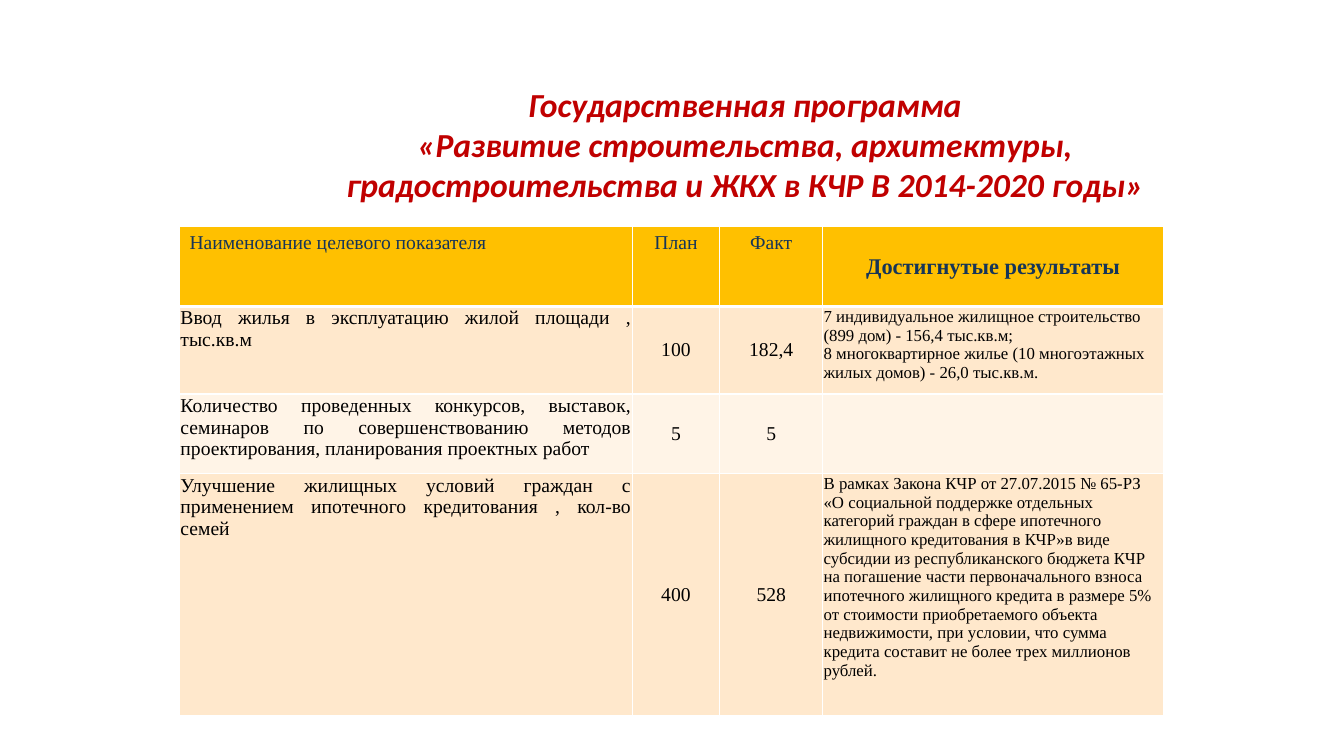
import pptx
import pptx.util
import pptx.dml.color
import pptx.enum.text
import pptx.oxml.ns
from dataclasses import dataclass
from lxml import etree

ALIGN = pptx.enum.text.PP_ALIGN
ANCHOR = pptx.enum.text.MSO_ANCHOR
Inches = pptx.util.Inches


@dataclass(frozen=True)
class Theme:
    title_font: str = "Calibri"
    table_font: str = "Times New Roman"
    title: str = "C00000"
    header_text: str = "163558"
    text: str = "000000"
    header_fill: str = "FFC000"
    bands: tuple = ("FFE8CC", "FFF4E7")
    border: str = "FFFFFF"
    title_size: int = 24
    heading_size: int = 16
    body_size: int = 14
    note_size: int = 12


THEME = Theme()
TIGHT = (0.01, 0.01, 0.01, 0)
ROOMY = (0.1, 0.05, 0.1, 0.05)

TITLE = ("Государственная программа\n«Развитие строительства, архитектуры, "
         "градостроительства и ЖКХ в КЧР В 2014-2020 годы»")
COLS = (4.49, 0.87, 1.02, 3.38)
ROWS = (0.79, 0.87, 0.79, 2.4)
HEADER = ("Наименование целевого показателя", "План", "Факт", "Достигнутые результаты")
INDICATORS = (
    ("Ввод жилья в эксплуатацию жилой площади , тыс.кв.м", "100", "182,4",
     "7 индивидуальное жилищное строительство (899 дом) - 156,4 тыс.кв.м;\n"
     "8 многоквартирное жилье (10 многоэтажных жилых домов) - 26,0 тыс.кв.м."),
    ("Количество проведенных конкурсов, выставок, семинаров по совершенствованию "
     "методов проектирования, планирования проектных работ", "5", "5", ""),
    ("Улучшение жилищных условий граждан с применением ипотечного кредитования , "
     "кол-во семей", "400", "528",
     "В рамках Закона КЧР от 27.07.2015 № 65-РЗ «О социальной поддержке отдельных "
     "категорий граждан в сфере ипотечного жилищного кредитования в КЧР»в виде субсидии "
     "из республиканского бюджета КЧР на погашение части первоначального взноса "
     "ипотечного жилищного кредита в размере 5% от стоимости приобретаемого объекта "
     "недвижимости, при условии, что сумма кредита составит не более трех миллионов рублей."),
)


@dataclass(frozen=True)
class CellStyle:
    size: int
    align: ALIGN
    anchor: ANCHOR = ANCHOR.TOP
    insets: tuple = ROOMY
    bold: bool = False


# One style per column, for the header and for the body rows
HEADER_STYLES = (
    CellStyle(THEME.body_size, ALIGN.LEFT),
    CellStyle(THEME.body_size, ALIGN.CENTER),
    CellStyle(THEME.body_size, ALIGN.CENTER),
    CellStyle(THEME.heading_size, ALIGN.CENTER, ANCHOR.MIDDLE, TIGHT, True),
)
BODY_STYLES = (
    CellStyle(THEME.body_size, ALIGN.JUSTIFY, insets=TIGHT),
    CellStyle(THEME.body_size, ALIGN.CENTER, ANCHOR.MIDDLE),
    CellStyle(THEME.body_size, ALIGN.CENTER, ANCHOR.MIDDLE),
    CellStyle(THEME.note_size, ALIGN.LEFT, insets=TIGHT),
)


def rgb(color):
    return pptx.dml.color.RGBColor.from_string(color)


def write(tf, text, font, size, color, align, bold=False, italic=False):
    tf.text = text
    for p in tf.paragraphs:
        p.alignment = align
        for f in [p.font] + [r.font for r in p.runs]:
            f.name, f.size, f.bold, f.italic = font, pptx.util.Pt(size), bold, italic
            f.color.rgb = rgb(color)


def set_borders(cell, bottom):
    qn = pptx.oxml.ns.qn
    tcPr = cell._tc.get_or_add_tcPr()
    for side, width in (("lnL", 1), ("lnR", 1), ("lnT", 1), ("lnB", bottom)):
        ln = etree.SubElement(tcPr, qn("a:" + side), w=str(pptx.util.Pt(width)))
        fill = etree.SubElement(ln, qn("a:solidFill"))
        etree.SubElement(fill, qn("a:srgbClr"), val=THEME.border)


def fill_cell(cell, text, style, fill, color, bottom):
    set_borders(cell, bottom)
    cell.fill.solid()
    cell.fill.fore_color.rgb = rgb(fill)
    cell.vertical_anchor = style.anchor
    (cell.margin_left, cell.margin_top,
     cell.margin_right, cell.margin_bottom) = map(Inches, style.insets)
    write(cell.text_frame, text, THEME.table_font, style.size, color, style.align, style.bold)


def add_title(slide, left, top, width, height):
    sp = slide.shapes.title
    sp.left, sp.top, sp.width, sp.height = map(Inches, (left, top, width, height))
    tf = sp.text_frame
    tf.word_wrap = True
    tf.auto_size = pptx.enum.text.MSO_AUTO_SIZE.NONE
    tf.vertical_anchor = ANCHOR.BOTTOM
    write(tf, TITLE, THEME.title_font, THEME.title_size, THEME.title,
          ALIGN.CENTER, bold=True, italic=True)


def add_indicators(slide, left, top):
    table = slide.shapes.add_table(
        len(ROWS), len(COLS), *map(Inches, (left, top, sum(COLS), sum(ROWS)))).table
    for column, width in zip(table.columns, COLS):
        column.width = Inches(width)
    for row, height in zip(table.rows, ROWS):
        row.height = Inches(height)

    # Header row
    for cell, text, style in zip(table.rows[0].cells, HEADER, HEADER_STYLES):
        fill_cell(cell, text, style, THEME.header_fill, THEME.header_text, 3)

    # Banded body rows
    for i, values in enumerate(INDICATORS):
        band = THEME.bands[i % len(THEME.bands)]
        for cell, text, style in zip(table.rows[i + 1].cells, values, BODY_STYLES):
            fill_cell(cell, text, style, band, THEME.text, 1)


def main():
    prs = pptx.Presentation()
    prs.slide_width, prs.slide_height = Inches(13.33), Inches(7.5)
    slide = prs.slides.add_slide(prs.slide_layouts[5])
    add_title(slide, 2.89, 0.77, 9, 1.31)
    add_indicators(slide, 1.78, 2.25)
    prs.save("out.pptx")


if __name__ == "__main__":
    main()
